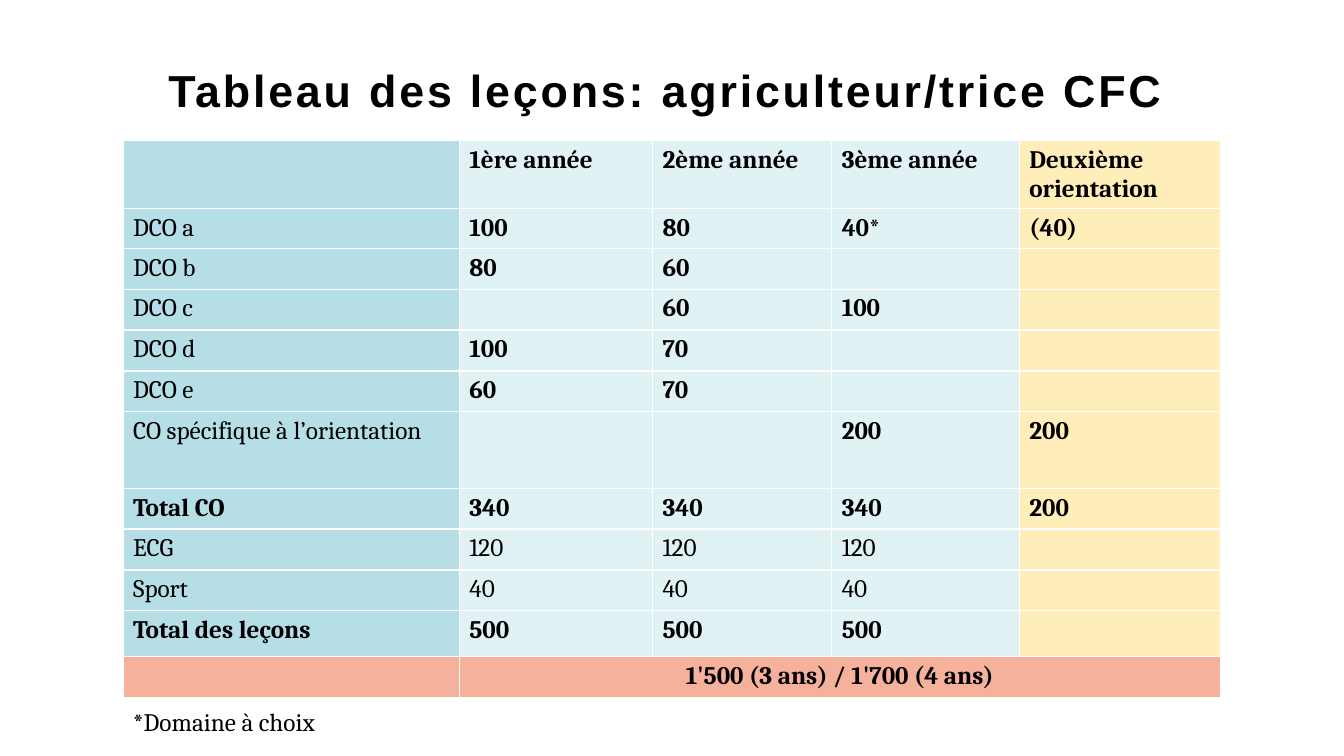
from pptx import Presentation
from pptx.dml.color import RGBColor
from pptx.enum import text
from pptx.util import Pt

TITLE = "Tableau des leçons: agriculteur/trice CFC"
FOOTNOTE = "*Domaine à choix"
GRAND_TOTAL = "1'500 (3 ans) / 1'700 (4 ans)"
LESSONS = [
    ("", "1ère année", "2ème année", "3ème année", "Deuxième orientation"),
    ("DCO a", "100", "80", "40*", "(40)"),
    ("DCO b", "80", "60", "", ""),
    ("DCO c", "", "60", "100", ""),
    ("DCO d", "100", "70", "", ""),
    ("DCO e", "60", "70", "", ""),
    ("CO spécifique à l’orientation", "", "", "200", "200"),
    ("Total CO", "340", "340", "340", "200"),
    ("ECG", "120", "120", "120", ""),
    ("Sport", "40", "40", "40", ""),
    ("Total des leçons", "500", "500", "500", ""),
    ("", GRAND_TOTAL, "", "", ""),
]
PLAIN_ROWS = ("ECG", "Sport")
COLUMN_FILLS = ["B5DEE7", "E1F2F5", "E1F2F5", "E1F2F5", "FFEEB9"]
TOTAL_FILL = "F5B19B"
COLUMN_WIDTHS = [240.2, 138, 128, 134, 143.8]
ROW_HEIGHT = 28.75
TALL_ROWS = {0: 48, 1: 28.3, 6: 55, 10: 32.8}
TABLE_LEFT, TABLE_TOP = 87.9, 100.3


def color(value):
    return RGBColor.from_string(value)


def write(frame, words, font="Cambria", size=18, bold=False, align=text.PP_ALIGN.LEFT, spacing=0):
    para = frame.paragraphs[0]
    para.alignment = align
    span = para.add_run()
    span.text = words
    span.font.name = font
    span.font.size = Pt(size)
    span.font.bold = bold
    span.font.color.rgb = color("000000")
    if spacing:
        span.font._element.set("spc", str(spacing * 100))


def place(shape, left, top, width, height):
    shape.left, shape.top = Pt(left), Pt(top)
    shape.width, shape.height = Pt(width), Pt(height)


def add_title(page):
    title = page.shapes.title
    place(title, 120.2, 38.9, 718.6, 50.4)
    frame = title.text_frame
    frame.auto_size = text.MSO_AUTO_SIZE.NONE
    frame.vertical_anchor = text.MSO_ANCHOR.BOTTOM
    frame.margin_left = frame.margin_right = 0
    frame.margin_top = frame.margin_bottom = Pt(5.76)
    write(frame, TITLE, font="Arial", size=32, bold=True, spacing=2)


def add_lessons(page):
    heights = [TALL_ROWS.get(index, ROW_HEIGHT) for index in range(len(LESSONS))]
    table = page.shapes.add_table(
        len(LESSONS), len(COLUMN_WIDTHS), Pt(TABLE_LEFT), Pt(TABLE_TOP),
        Pt(sum(COLUMN_WIDTHS)), Pt(sum(heights))).table
    table.horz_banding = False
    for column, width in zip(table.columns, COLUMN_WIDTHS):
        column.width = Pt(width)
    for row, height in zip(table.rows, heights):
        row.height = Pt(height)
    last = len(LESSONS) - 1
    table.cell(last, 1).merge(table.cell(last, 4))
    for row, values in enumerate(LESSONS):
        label = values[0]
        for column, value in enumerate(values):
            cell = table.cell(row, column)
            cell.fill.solid()
            cell.fill.fore_color.rgb = color(TOTAL_FILL if row == last else COLUMN_FILLS[column])
            if value:
                bold = label.startswith("Total") or (column > 0 and label not in PLAIN_ROWS)
                align = text.PP_ALIGN.CENTER if row == last else text.PP_ALIGN.LEFT
                write(cell.text_frame, value, bold=bold, align=align)


def add_footnote(page):
    box = page.shapes.add_textbox(Pt(TABLE_LEFT), Pt(501.1), Pt(162), Pt(30.2))
    box.text_frame.word_wrap = True
    box.text_frame.auto_size = text.MSO_AUTO_SIZE.SHAPE_TO_FIT_TEXT
    write(box.text_frame, FOOTNOTE)


def main():
    deck = Presentation()
    deck.slide_width, deck.slide_height = Pt(960), Pt(540)
    page = deck.slides.add_slide(deck.slide_layouts[5])
    add_title(page)
    add_lessons(page)
    add_footnote(page)
    deck.save("out.pptx")


if __name__ == "__main__":
    main()
